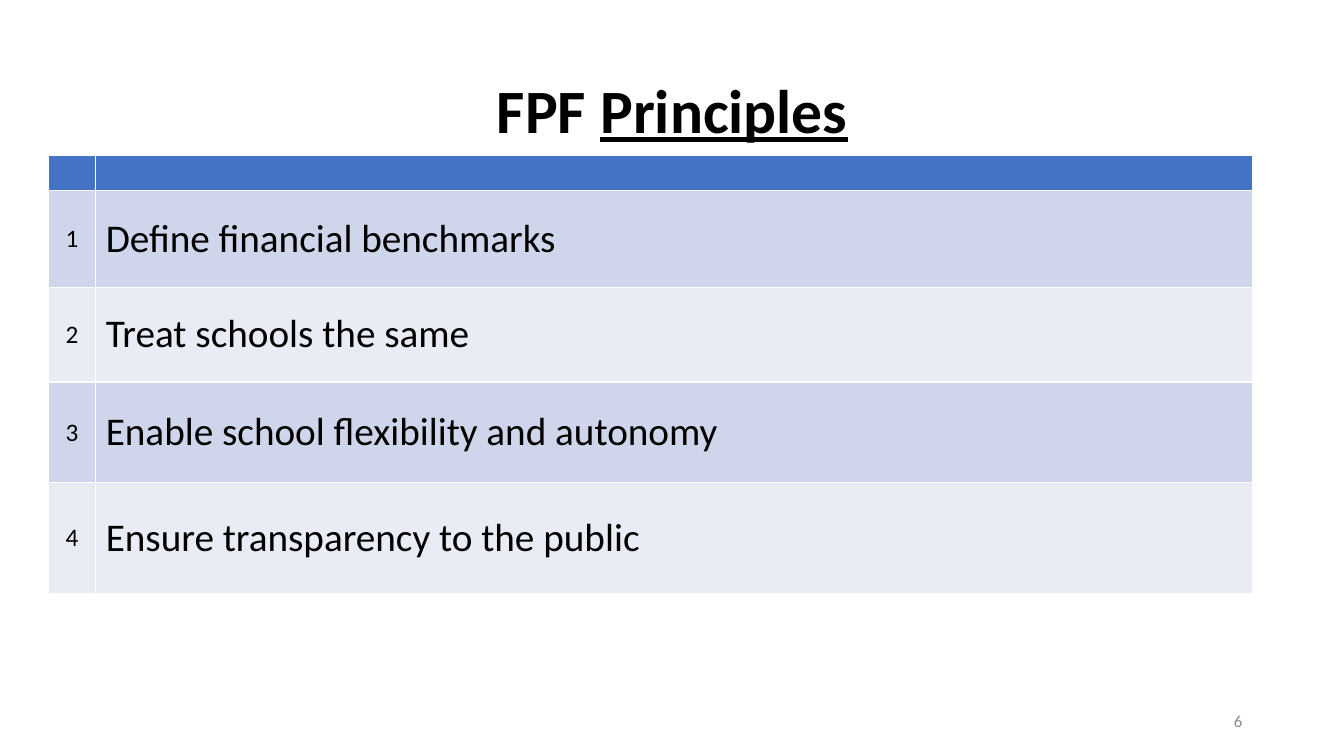
import pptx
import pptx.dml.color
import pptx.enum.text
import pptx.util

Inches = pptx.util.Inches
Align = pptx.enum.text.PP_ALIGN
Anchor = pptx.enum.text.MSO_ANCHOR

COLORS = {
    "text": "000000",
    "number": "8C8C8C",
    "header": "4472C4",
    "odd_row": "CFD5EA",
    "even_row": "E9EBF5",
}
TITLE_FORMAT = {"size": pptx.util.Pt(44), "name": "Calibri", "bold": True}
INDEX_FORMAT = {"size": pptx.util.Pt(18), "name": "Calibri"}
PRINCIPLE_FORMAT = {"size": pptx.util.Pt(28), "name": "Calibri"}
PAGE_FORMAT = {"size": pptx.util.Pt(12), "name": "Calibri"}

PRINCIPLES = [
    "Define financial benchmarks",
    "Treat schools the same",
    "Enable school flexibility and autonomy",
    "Ensure transparency to the public",
]
COLUMN_WIDTHS = [0.47, 11.47]
ROW_HEIGHTS = [0.35, 0.96, 0.94, 1, 1.1]


def add_run(paragraph, text, formats, color="text"):
    """Append a formatted run to a paragraph."""
    run = paragraph.add_run()
    run.text = text
    for name, value in formats.items():
        setattr(run.font, name, value)
    run.font.color.rgb = pptx.dml.color.RGBColor.from_string(COLORS[color])


def fill_cell(cell, color):
    """Give a table cell a solid fill and centre it vertically."""
    cell.fill.solid()
    cell.fill.fore_color.rgb = pptx.dml.color.RGBColor.from_string(COLORS[color])
    cell.vertical_anchor = Anchor.MIDDLE


def add_title(slide, left, top, width, height):
    """Place the slide title in the given box."""
    title = slide.shapes.title
    title.left, title.top = Inches(left), Inches(top)
    title.width, title.height = Inches(width), Inches(height)
    frame = title.text_frame
    frame.auto_size = pptx.enum.text.MSO_AUTO_SIZE.NONE
    frame.vertical_anchor = Anchor.MIDDLE
    paragraph = frame.paragraphs[0]
    paragraph.alignment = Align.CENTER
    paragraph.line_spacing = 0.9
    add_run(paragraph, "FPF ", TITLE_FORMAT)
    add_run(paragraph, "Principles", {**TITLE_FORMAT, "underline": True})


def add_principles_table(slide, left, top, width, height):
    """Place the numbered table of principles in the given box."""
    table = slide.shapes.add_table(
        len(ROW_HEIGHTS), len(COLUMN_WIDTHS),
        Inches(left), Inches(top), Inches(width), Inches(height),
    ).table
    for column, column_width in zip(table.columns, COLUMN_WIDTHS):
        column.width = Inches(column_width)
    for row, row_height in zip(table.rows, ROW_HEIGHTS):
        row.height = Inches(row_height)
    for cell in table.rows[0].cells:
        fill_cell(cell, "header")
        cell.margin_top = cell.margin_bottom = 0
    for index, principle in enumerate(PRINCIPLES, start=1):
        index_cell, principle_cell = table.rows[index].cells
        for cell in (index_cell, principle_cell):
            fill_cell(cell, "odd_row" if index % 2 else "even_row")
        index_paragraph = index_cell.text_frame.paragraphs[0]
        index_paragraph.alignment = Align.CENTER
        add_run(index_paragraph, str(index), INDEX_FORMAT)
        add_run(principle_cell.text_frame.paragraphs[0], principle, PRINCIPLE_FORMAT)


def add_page_number(slide, left, top, width, height):
    """Place the page number at the right of the given box."""
    box = slide.shapes.add_textbox(
        Inches(left), Inches(top), Inches(width), Inches(height))
    frame = box.text_frame
    frame.word_wrap = True
    frame.vertical_anchor = Anchor.MIDDLE
    paragraph = frame.paragraphs[0]
    paragraph.alignment = Align.RIGHT
    add_run(paragraph, "6", PAGE_FORMAT, "number")


def main():
    """Build the slide and save the presentation."""
    presentation = pptx.Presentation()
    presentation.slide_width = Inches(13.33)
    presentation.slide_height = Inches(7.5)
    slide = presentation.slides.add_slide(presentation.slide_layouts[5])
    add_title(slide, 0.92, 0.4, 11.5, 1.45)
    add_principles_table(slide, 0.48, 1.54, sum(COLUMN_WIDTHS), sum(ROW_HEIGHTS))
    add_page_number(slide, 9.42, 6.95, 3, 0.4)
    presentation.save("out.pptx")


if __name__ == "__main__":
    main()
